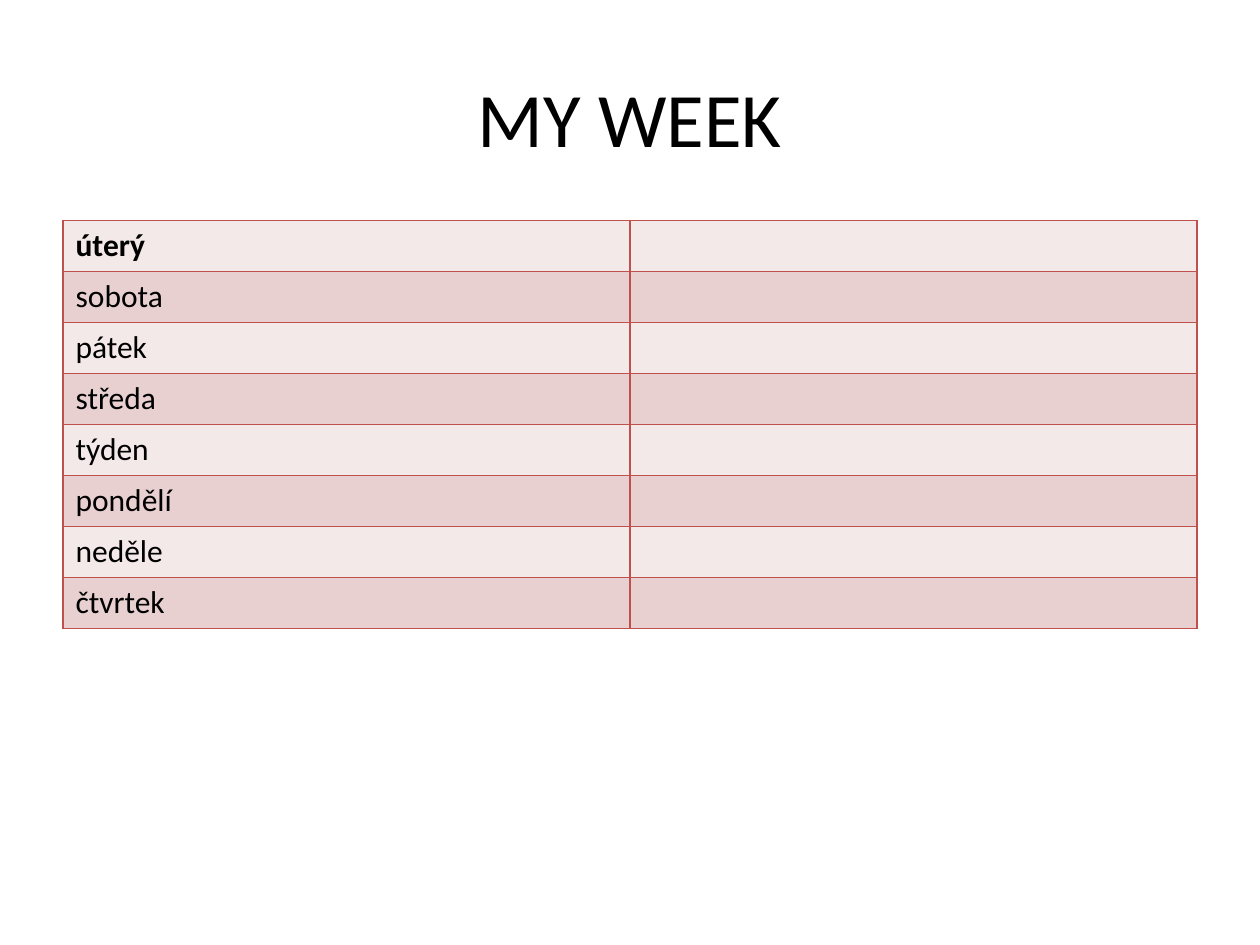
from dataclasses import dataclass

from lxml.etree import SubElement
from pptx import Presentation
from pptx.dml.color import RGBColor
from pptx.enum.text import MSO_ANCHOR, PP_ALIGN
from pptx.oxml.ns import qn
from pptx.util import Inches, Pt


@dataclass(frozen=True)
class Theme:
    font: str = "Calibri"
    ink: str = "000000"
    line: str = "C0504D"
    bands: tuple = ("F4E9E9", "E8D0D0")
    head: int = 44
    body: int = 18
    rule: int = 1


THEME = Theme()
DAYS = ["úterý", "sobota", "pátek", "středa", "týden", "pondělí", "neděle", "čtvrtek"]


def write(frame, text, size=THEME.body, bold=False, align=PP_ALIGN.LEFT):
    para = frame.paragraphs[0]
    para.alignment = align
    para.font.size = Pt(size)
    run = para.add_run()
    run.text = text
    font = run.font
    font.name, font.size, font.bold = THEME.font, Pt(size), bold
    font.color.rgb = RGBColor.from_string(THEME.ink)


def border(cell):
    props = cell._tc.get_or_add_tcPr()
    for side in ("lnL", "lnR", "lnT", "lnB"):
        line = SubElement(props, qn(f"a:{side}"), w=str(Pt(THEME.rule)))
        fill = SubElement(line, qn("a:solidFill"))
        SubElement(fill, qn("a:srgbClr"), val=THEME.line)


def add_title(slide, box, text):
    frame = slide.shapes.add_textbox(*box).text_frame
    frame.word_wrap = True
    frame.vertical_anchor = MSO_ANCHOR.MIDDLE
    write(frame, text, size=THEME.head, align=PP_ALIGN.CENTER)


def add_week(slide, box, days):
    table = slide.shapes.add_table(len(days), 2, *box).table
    for row, day in enumerate(days):
        for col, text in enumerate((day, "")):
            cell = table.cell(row, col)
            # Borders must precede the fill in the cell properties
            border(cell)
            cell.fill.solid()
            cell.fill.fore_color.rgb = RGBColor.from_string(THEME.bands[row % 2])
            if text:
                write(cell.text_frame, text, bold=row == 0)


def main():
    deck = Presentation()
    deck.slide_width, deck.slide_height = Inches(10), Inches(7.5)
    slide = deck.slides.add_slide(deck.slide_layouts[6])
    left, width = Inches(0.5), Inches(9)

    # Heading
    add_title(slide, (left, Inches(0.3), width, Inches(1.25)), "MY WEEK")

    # Day list with a blank column for answers
    add_week(slide, (left, Inches(1.75), width, Inches(3.24)), DAYS)

    deck.save("out.pptx")


if __name__ == "__main__":
    main()
